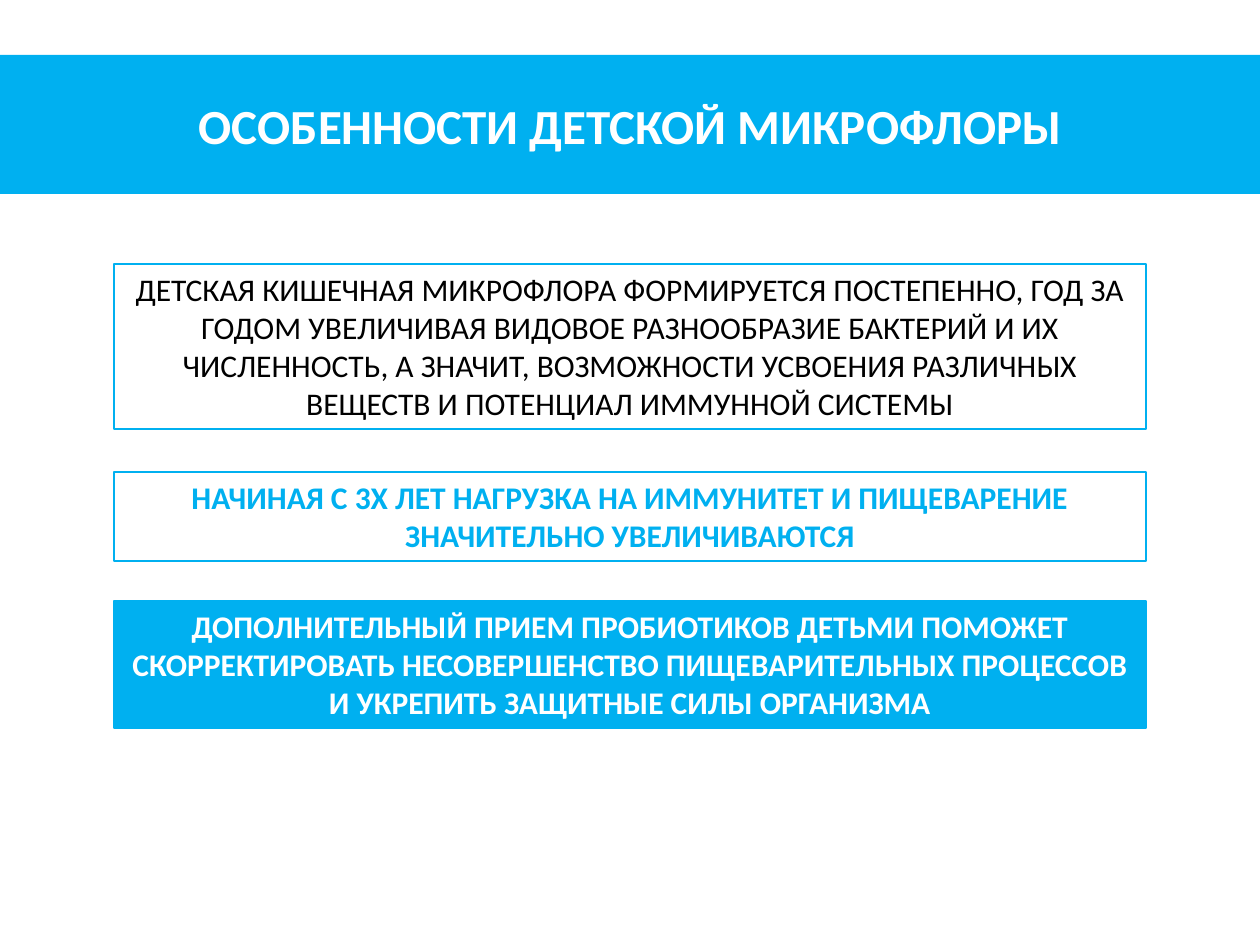
"""Build a slide on the features of children's microflora."""
from pptx import Presentation
from pptx import util as u
from pptx.dml.color import RGBColor
from pptx.enum import shapes, text

COLORS = {"blue": "00B0F0", "white": "FFFFFF", "black": "000000"}


def px(n):
    return u.Emu(round(n * 914400 / 126))


def rgb(name):
    return RGBColor.from_string(COLORS[name])


prs = Presentation()
prs.slide_width, prs.slide_height = px(1260), px(945)
s = prs.slides.add_slide(prs.slide_layouts[6])

MIDDLE, TOP = text.MSO_ANCHOR.MIDDLE, text.MSO_ANCHOR.TOP
FIT, FIXED = text.MSO_AUTO_SIZE.SHAPE_TO_FIT_TEXT, text.MSO_AUTO_SIZE.NONE
title = {"left": 0, "width": 1260, "line": None, "size": 28,
         "frame": {"vertical_anchor": MIDDLE, "auto_size": FIXED}}
box = {"left": 114, "width": 1032, "line": "blue", "size": 18,
       "frame": {"vertical_anchor": TOP, "auto_size": FIT}}

blocks = [
    (title, 55, 139, "blue", "white", True, "ОСОБЕННОСТИ ДЕТСКОЙ МИКРОФЛОРЫ"),
    (box, 601, 127, "blue", "white", True,
     "ДОПОЛНИТЕЛЬНЫЙ ПРИЕМ ПРОБИОТИКОВ ДЕТЬМИ ПОМОЖЕТ СКОРРЕКТИРОВАТЬ "
     "НЕСОВЕРШЕНСТВО ПИЩЕВАРИТЕЛЬНЫХ ПРОЦЕССОВ И УКРЕПИТЬ ЗАЩИТНЫЕ СИЛЫ ОРГАНИЗМА"),
    (box, 472, 89, None, "blue", True,
     "НАЧИНАЯ С 3Х ЛЕТ НАГРУЗКА НА ИММУНИТЕТ И ПИЩЕВАРЕНИЕ ЗНАЧИТЕЛЬНО УВЕЛИЧИВАЮТСЯ"),
    (box, 264, 165, None, "black", False,
     "ДЕТСКАЯ КИШЕЧНАЯ МИКРОФЛОРА ФОРМИРУЕТСЯ ПОСТЕПЕННО, ГОД ЗА ГОДОМ "
     "УВЕЛИЧИВАЯ ВИДОВОЕ РАЗНООБРАЗИЕ БАКТЕРИЙ И ИХ ЧИСЛЕННОСТЬ, А ЗНАЧИТ, "
     "ВОЗМОЖНОСТИ УСВОЕНИЯ РАЗЛИЧНЫХ ВЕЩЕСТВ И ПОТЕНЦИАЛ ИММУННОЙ СИСТЕМЫ"),
]

for style, top, height, fill, color, bold, words in blocks:
    sp = s.shapes.add_shape(shapes.MSO_SHAPE.RECTANGLE, px(style["left"]), px(top),
                            px(style["width"]), px(height))
    sp.shadow.inherit = False
    if fill:
        sp.fill.solid()
        sp.fill.fore_color.rgb = rgb(fill)
    else:
        sp.fill.background()
    if style["line"]:
        sp.line.color.rgb = rgb(style["line"])
        sp.line.width = u.Pt(0.75)
    else:
        sp.line.fill.background()
    tf = sp.text_frame
    tf.word_wrap = True
    for name, value in style["frame"].items():
        setattr(tf, name, value)
    p = tf.paragraphs[0]
    p.alignment = text.PP_ALIGN.CENTER
    r = p.add_run()
    r.text = words
    for name, value in {"name": "Calibri", "size": u.Pt(style["size"]), "bold": bold}.items():
        setattr(r.font, name, value)
    r.font.color.rgb = rgb(color)

prs.save("out.pptx")
